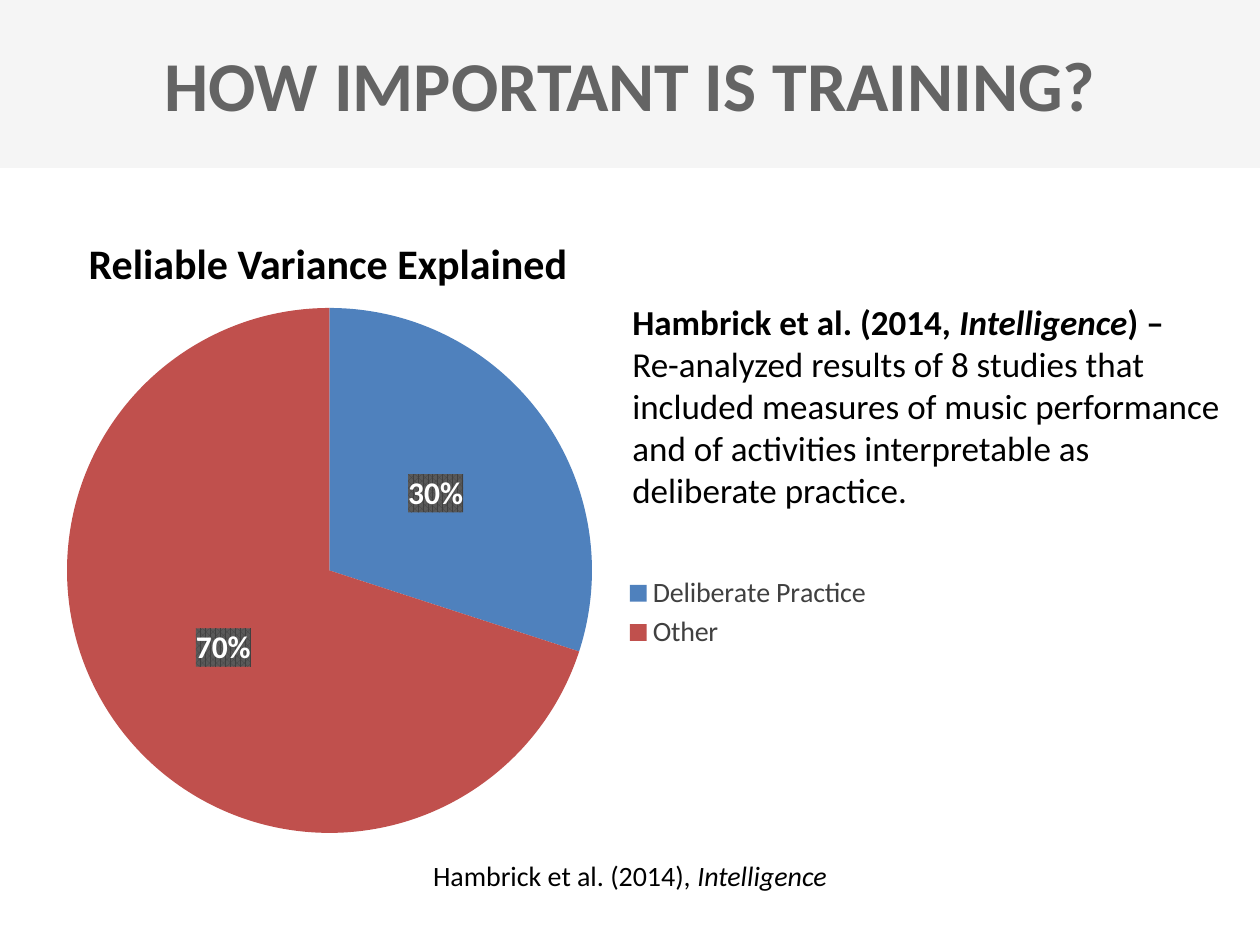
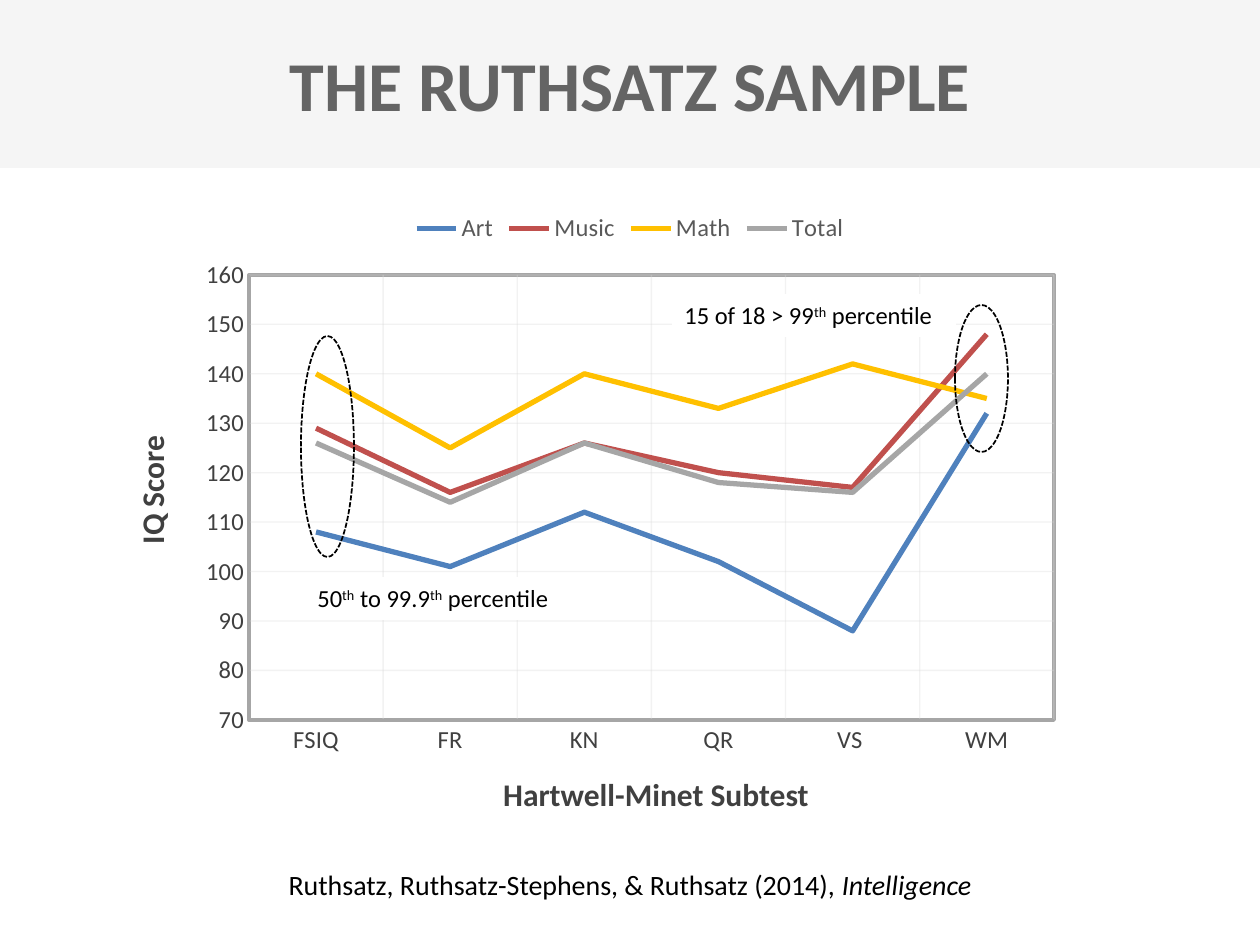
from collections import namedtuple

from lxml import etree
from pptx import Presentation
from pptx.chart.data import CategoryChartData
from pptx.dml.color import RGBColor
from pptx.enum.chart import XL_CHART_TYPE, XL_LABEL_POSITION, XL_LEGEND_POSITION, XL_TICK_MARK
from pptx.enum.dml import MSO_LINE
from pptx.enum.shapes import MSO_SHAPE
from pptx.enum.text import MSO_ANCHOR, MSO_AUTO_SIZE, PP_ALIGN
from pptx.oxml import parse_xml
from pptx.oxml.ns import qn
from pptx.util import Pt

PIE, LINE = XL_CHART_TYPE.PIE, XL_CHART_TYPE.LINE
LEGEND_RIGHT, LEGEND_TOP = XL_LEGEND_POSITION.RIGHT, XL_LEGEND_POSITION.TOP
LABEL_CENTER = XL_LABEL_POSITION.CENTER
NO_TICK = XL_TICK_MARK.NONE
SHORT_DASH = MSO_LINE.SQUARE_DOT
RECTANGLE, OVAL = MSO_SHAPE.RECTANGLE, MSO_SHAPE.OVAL
MIDDLE = MSO_ANCHOR.MIDDLE
FIXED_SIZE, GROW = MSO_AUTO_SIZE.NONE, MSO_AUTO_SIZE.SHAPE_TO_FIT_TEXT
LEFT, CENTER = PP_ALIGN.LEFT, PP_ALIGN.CENTER

FONT = "Calibri"
BLACK = RGBColor(0x00, 0x00, 0x00)
WHITE = RGBColor(0xFF, 0xFF, 0xFF)
BAND_GRAY = RGBColor(0xF5, 0xF5, 0xF5)
TITLE_GRAY = RGBColor(0x64, 0x64, 0x64)
DARK_GRAY = RGBColor(0x40, 0x40, 0x40)
MEDIUM_GRAY = RGBColor(0x59, 0x59, 0x59)
AXIS_GRAY = RGBColor(0xA6, 0xA6, 0xA6)
GRID_GRAY = RGBColor(0xD9, 0xD9, 0xD9)
BLUE = RGBColor(0x4F, 0x81, 0xBD)
RED = RGBColor(0xC0, 0x50, 0x4D)
YELLOW = RGBColor(0xFF, 0xC0, 0x00)

CHART_NS = "http://schemas.openxmlformats.org/drawingml/2006/chart"
DRAWING_NS = "http://schemas.openxmlformats.org/drawingml/2006/main"
EMU_PER_PX = 914400 / 126
SLIDE_WIDTH, SLIDE_HEIGHT = 1260, 945
BAND_HEIGHT = 168


class Box(namedtuple("Box", "left top width height")):
    """A rectangle in px."""

    def inside(self, left, top, width, height):
        return Box(self.left + left, self.top + top, width, height)

    def emu(self):
        return [round(length * EMU_PER_PX) for length in self]


def set_font(font, size, color, bold=False):
    font.name, font.size, font.bold = FONT, Pt(size), bold
    font.color.rgb = color


def add_text(slide, box, paragraphs, size, color=BLACK, bold=False,
             alignment=CENTER, fill=None):
    """Each paragraph is a list of (text, style) runs."""
    shape = slide.shapes.add_textbox(*box.emu())
    if fill is not None:
        shape.fill.solid()
        shape.fill.fore_color.rgb = fill
    frame = shape.text_frame
    frame.word_wrap = True
    frame.auto_size = GROW
    for index, runs in enumerate(paragraphs):
        paragraph = frame.paragraphs[0] if index == 0 else frame.add_paragraph()
        paragraph.alignment = alignment
        set_font(paragraph.font, size, color, bold)
        for text, style in runs:
            run = paragraph.add_run()
            run.text = text
            if "bold" in style:
                run.font.bold = True
            if "italic" in style:
                run.font.italic = True
            if "super" in style:
                run._r.get_or_add_rPr().set("baseline", "30000")
    return shape


def add_titled_slide(presentation, title_text, title_box):
    slide = presentation.slides.add_slide(presentation.slide_layouts[5])
    title = slide.shapes.title

    # Band behind the title
    band = slide.shapes.add_shape(RECTANGLE, *Box(0, 0, SLIDE_WIDTH, BAND_HEIGHT).emu())
    band.shadow.inherit = False
    band.fill.solid()
    band.fill.fore_color.rgb = BAND_GRAY
    band.line.fill.background()
    title.element.addprevious(band.element)

    # Title
    title.left, title.top, title.width, title.height = title_box.emu()
    frame = title.text_frame
    frame.text = title_text
    frame.auto_size = FIXED_SIZE
    frame.vertical_anchor = MIDDLE
    paragraph = frame.paragraphs[0]
    paragraph.alignment = CENTER
    set_font(paragraph.font, 40, TITLE_GRAY, bold=True)
    return slide


def add_citation(slide, top, authors):
    add_text(slide, Box(0, top, SLIDE_WIDTH, 47),
             [[(authors, ""), ("Intelligence", "italic")]], 16)


def set_layout(element, index, box, area, inner=False):
    """Fix a chart part at a box, given in px within the chart area."""
    for old_layout in element.findall(qn("c:layout")):
        element.remove(old_layout)
    layout = etree.Element(qn("c:layout"))
    manual = etree.SubElement(layout, qn("c:manualLayout"))
    settings = [("layoutTarget", "inner")] if inner else []
    settings += [("xMode", "edge"), ("yMode", "edge"),
                 ("x", box.left / area.width), ("y", box.top / area.height),
                 ("w", box.width / area.width), ("h", box.height / area.height)]
    for name, value in settings:
        etree.SubElement(manual, qn("c:" + name)).set("val", str(value))
    element.insert(index, layout)


def add_chart(slide, box, chart_type, categories, series, plot_box):
    data = CategoryChartData()
    data.categories = categories
    for name, values in series:
        data.add_series(name, values)
    chart = slide.shapes.add_chart(chart_type, *box.emu(), data).chart
    chart.has_title = False
    set_font(chart.font, 10, BLACK)
    plot_area = chart._chartSpace.chart.plotArea
    set_layout(plot_area, 0, plot_box, box, inner=True)
    chart.plots[0].vary_by_categories = chart_type == PIE
    return chart


def add_legend(chart, position, size, color):
    chart.has_legend = True
    chart.legend.position = position
    chart.legend.include_in_layout = False
    set_font(chart.legend.font, size, color)


def add_variance_pie(slide, box):
    chart = add_chart(slide, box, PIE, ["Deliberate Practice", "Other"],
                      [("Series 1", (30, 70))], Box(67, 17, 525, 525))
    add_legend(chart, LEGEND_RIGHT, 16, DARK_GRAY)
    set_layout(chart.legend._element, 1, Box(623, 280, 250, 84), box)

    # Slices
    plot = chart.plots[0]
    for index, color in enumerate((BLUE, RED)):
        fill = plot.series[0].points[index].format.fill
        fill.solid()
        fill.fore_color.rgb = color

    # Percent labels on a dark pattern
    plot.has_data_labels = True
    labels = plot.data_labels
    labels.show_percentage, labels.show_value = True, False
    labels.number_format, labels.number_format_is_linked = "0%", False
    labels.position = LABEL_CENTER
    set_font(labels.font, 18, WHITE, bold=True)
    pattern = parse_xml(
        f'<c:spPr xmlns:c="{CHART_NS}" xmlns:a="{DRAWING_NS}"><a:pattFill prst="pct75">'
        f'<a:fgClr><a:srgbClr val="{DARK_GRAY}"/></a:fgClr>'
        f'<a:bgClr><a:srgbClr val="{MEDIUM_GRAY}"/></a:bgClr></a:pattFill></c:spPr>')
    labels._element.find(qn("c:txPr")).addprevious(pattern)


def style_axis(axis):
    axis.major_tick_mark = axis.minor_tick_mark = NO_TICK
    set_font(axis.tick_labels.font, 14, DARK_GRAY)
    axis.format.line.color.rgb = AXIS_GRAY
    axis.format.line.width = Pt(1.5)
    axis.has_major_gridlines = True
    grid_line = axis.major_gridlines.format.line
    grid_line.color.rgb = GRID_GRAY
    grid_line.width = Pt(0.75)
    for color in axis._element.xpath("c:majorGridlines//a:srgbClr"):
        etree.SubElement(color, qn("a:alpha")).set("val", "32000")


def add_score_chart(slide, box):
    subtests = ["FSIQ", "FR", "KN", "QR", "VS ", "WM"]
    scores = [("Art", (108, 101, 112, 102, 88, 132)),
              ("Music", (129, 116, 126, 120, 117, 148)),
              ("Math", (140, 125, 140, 133, 142, 135)),
              ("Total", (126, 114, 126, 118, 116, 140))]
    chart = add_chart(slide, box, LINE, subtests, scores, Box(60, 76, 805, 445))
    add_legend(chart, LEGEND_TOP, 14, MEDIUM_GRAY)
    for series, color in zip(chart.plots[0].series, (BLUE, RED, YELLOW, AXIS_GRAY)):
        series.smooth = False
        series.format.line.color.rgb = color
        series.format.line.width = Pt(3)

    # Axes and plot frame
    for axis in (chart.category_axis, chart.value_axis):
        style_axis(axis)
    chart.value_axis.minimum_scale = 70
    chart.value_axis.maximum_scale = 160
    chart.value_axis.major_unit = 10
    chart._chartSpace.chart.plotArea.append(parse_xml(
        f'<c:spPr xmlns:c="{CHART_NS}" xmlns:a="{DRAWING_NS}"><a:noFill/><a:ln w="28575">'
        f'<a:solidFill><a:srgbClr val="{AXIS_GRAY}"/></a:solidFill></a:ln></c:spPr>'))

    # Axis titles
    add_text(slide, box.inside(73, 570, 788, 50), [[("Hartwell-Minet Subtest", "")]],
             18, DARK_GRAY, bold=True)
    score_title = add_text(slide, box.inside(-253, 266, 431, 50), [[("IQ Score", "")]],
                           18, DARK_GRAY, bold=True)
    score_title.rotation = 270

    # Dashed rings around the first and last subtests
    for ring_box in (box.inside(766, 106, 53, 147), box.inside(112, 137, 53, 221)):
        ring = slide.shapes.add_shape(OVAL, *ring_box.emu())
        ring.shadow.inherit = False
        ring.fill.background()
        ring.line.color.rgb = BLACK
        ring.line.width = Pt(1)
        ring.line.dash_style = SHORT_DASH

    # Percentile notes
    notes = [(box.inside(483, 95, 284, 43),
              [("15 of 18 > 99", ""), ("th", "super"), (" percentile", "")]),
             (box.inside(116, 378, 267, 43),
              [("50", ""), ("th", "super"), (" to 99.9", ""), ("th", "super"),
               (" percentile", "")])]
    for note_box, runs in notes:
        add_text(slide, note_box, [runs], 14, alignment=LEFT, fill=WHITE)


def build_training_slide(presentation):
    slide = add_titled_slide(presentation, "HOW IMPORTANT IS TRAINING?",
                             Box(0, 55, SLIDE_WIDTH, 57))
    add_variance_pie(slide, Box(0, 291, 924, 559))
    add_citation(slide, 852, "Hambrick et al. (2014), ")
    add_text(slide, Box(60, 231, 536, 63), [[("Reliable Variance Explained", "")]],
             24, bold=True)
    study = [[("Hambrick et al. (2014, ", "bold"), ("Intelligence", "bold italic"),
              (") –", "bold")],
             [("Re-analyzed results of 8 studies that included measures of music "
               "performance and of activities interpretable as deliberate practice.", "")]]
    add_text(slide, Box(620, 294, 630, 224), study, 20, alignment=LEFT)


def build_sample_slide(presentation):
    slide = add_titled_slide(presentation, "THE RUTHSATZ SAMPLE", Box(131, 55, 998, 57))
    add_score_chart(slide, Box(189, 199, 882, 567))
    add_citation(slide, 861, "Ruthsatz, Ruthsatz-Stephens, & Ruthsatz (2014), ")


def main():
    presentation = Presentation()
    _, _, presentation.slide_width, presentation.slide_height = Box(
        0, 0, SLIDE_WIDTH, SLIDE_HEIGHT).emu()
    build_training_slide(presentation)
    build_sample_slide(presentation)
    presentation.save("out.pptx")


if __name__ == "__main__":
    main()
